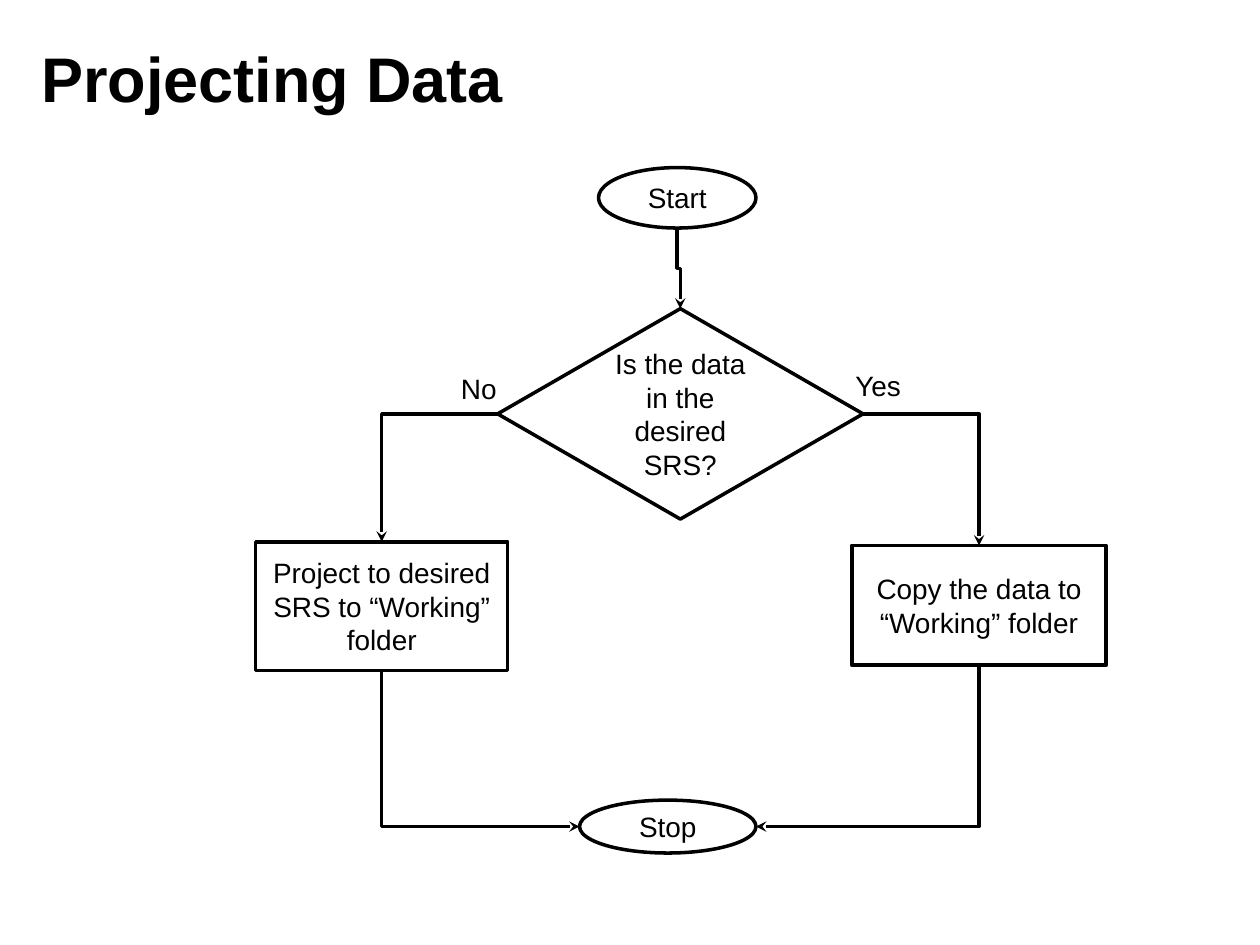
import dataclasses

import lxml.etree
import pptx
import pptx.dml.color
import pptx.enum.shapes
import pptx.enum.text
import pptx.oxml.ns
import pptx.util

SHAPES = pptx.enum.shapes.MSO_SHAPE
ANCHOR = pptx.enum.text.MSO_ANCHOR
ALIGN = pptx.enum.text.PP_ALIGN
COLUMNS, ROWS = 100, 75
SIDES = ("top", "left", "bottom", "right")


@dataclasses.dataclass(frozen=True)
class Theme:
    font: str = "Arial"
    ink: str = "000000"
    paper: str = "FFFFFF"
    title_size: int = 36
    body_size: int = 16
    line_width: int = 2


def color(value):
    return pptx.dml.color.RGBColor.from_string(value)


def write(box, text, theme, size=None, bold=False, align=ALIGN.LEFT, anchor=ANCHOR.TOP):
    frame = box.text_frame
    frame.word_wrap = True
    frame.vertical_anchor = anchor
    para = frame.paragraphs[0]
    para.alignment = align
    span = para.add_run()
    span.text = text
    span.font.name = theme.font
    span.font.size = pptx.util.Pt(size or theme.body_size)
    span.font.bold = bold
    span.font.color.rgb = color(theme.ink)


def side_point(node, side):
    middle_x = node.left + node.width // 2
    middle_y = node.top + node.height // 2
    return {
        "top": (middle_x, node.top),
        "left": (node.left, middle_y),
        "bottom": (middle_x, node.top + node.height),
        "right": (node.left + node.width, middle_y),
    }[side]


def site_index(node, side):
    step = 2 if node.auto_shape_type == SHAPES.OVAL else 1
    return SIDES.index(side) * step


class FlowPage:
    def __init__(self, deck, theme):
        self.theme = theme
        self.column = deck.slide_width / COLUMNS
        self.row = deck.slide_height / ROWS
        self.page = deck.slides.add_slide(deck.slide_layouts[6])
        self.page.background.fill.solid()
        self.page.background.fill.fore_color.rgb = color(theme.paper)

    def place(self, left, top, width, height):
        return (
            round(left * self.column),
            round(top * self.row),
            round(width * self.column),
            round(height * self.row),
        )

    def outline(self, element):
        element.line.color.rgb = color(self.theme.ink)
        element.line.width = pptx.util.Pt(self.theme.line_width)

    def label(self, text, area, **style):
        box = self.page.shapes.add_textbox(*self.place(*area))
        write(box, text, self.theme, **style)

    def node(self, kind, text, area):
        shape = self.page.shapes.add_shape(kind, *self.place(*area))
        shape.shadow.inherit = False
        shape.fill.solid()
        shape.fill.fore_color.rgb = color(self.theme.paper)
        self.outline(shape)
        write(shape, text, self.theme, align=ALIGN.CENTER, anchor=ANCHOR.MIDDLE)
        return shape

    def arrow(self, source, source_side, target, target_side):
        start_x, start_y = side_point(source, source_side)
        end_x, end_y = side_point(target, target_side)
        link = self.page.shapes.add_connector(
            pptx.enum.shapes.MSO_CONNECTOR.ELBOW, start_x, start_y, end_x, end_y
        )
        link._connect_begin_to(source, site_index(source, source_side))
        link._connect_end_to(target, site_index(target, target_side))
        properties = link._element.spPr
        if {source_side, target_side} != {"bottom", "top"}:
            properties.find(pptx.oxml.ns.qn("a:prstGeom")).set("prst", "bentConnector2")
        if source_side == "bottom":
            self.turn_down(link, end_x > start_x)
        self.outline(link)
        line = properties.find(pptx.oxml.ns.qn("a:ln"))
        lxml.etree.SubElement(line, pptx.oxml.ns.qn("a:tailEnd"), type="stealth")
        lxml.etree.SubElement(properties, pptx.oxml.ns.qn("a:effectLst"))

    def turn_down(self, link, rightward):
        width, height = link.width, link.height
        link.left += (width - height) // 2
        link.top += (height - width) // 2
        link.width, link.height = height, width
        frame = link._element.spPr.xfrm
        frame.set("rot", str((270 if rightward else 90) * 60000))
        frame.set("flipH", "1" if rightward else "0")


def main():
    theme = Theme()
    deck = pptx.Presentation()
    deck.slide_width = pptx.util.Inches(10)
    deck.slide_height = pptx.util.Inches(7.5)
    flow = FlowPage(deck, theme)

    flow.label("Projecting Data", (2.3, 1.5, 80.3, 9.3),
               size=theme.title_size, bold=True, anchor=ANCHOR.MIDDLE)
    start = flow.node(SHAPES.OVAL, "Start", (47.5, 13.3, 12.5, 4.8))
    question = flow.node(SHAPES.DIAMOND, "Is the data in the desired SRS?",
                         (39.5, 24.5, 29, 16.7))
    project = flow.node(SHAPES.RECTANGLE, "Project to desired SRS to “Working” folder",
                        (20.3, 43, 20, 10.2))
    duplicate = flow.node(SHAPES.RECTANGLE, "Copy the data to “Working” folder",
                          (67.6, 43.3, 20.2, 9.5))
    stop = flow.node(SHAPES.OVAL, "Stop", (46, 63.5, 14, 4.2))
    flow.label("No", (35.6, 29, 6.1, 3.7))
    flow.label("Yes", (66.9, 28.8, 6.1, 3.7))

    for route in (
        (start, "bottom", question, "top"),
        (question, "left", project, "top"),
        (question, "right", duplicate, "top"),
        (project, "bottom", stop, "left"),
        (duplicate, "bottom", stop, "right"),
    ):
        flow.arrow(*route)

    deck.save("out.pptx")


if __name__ == "__main__":
    main()
